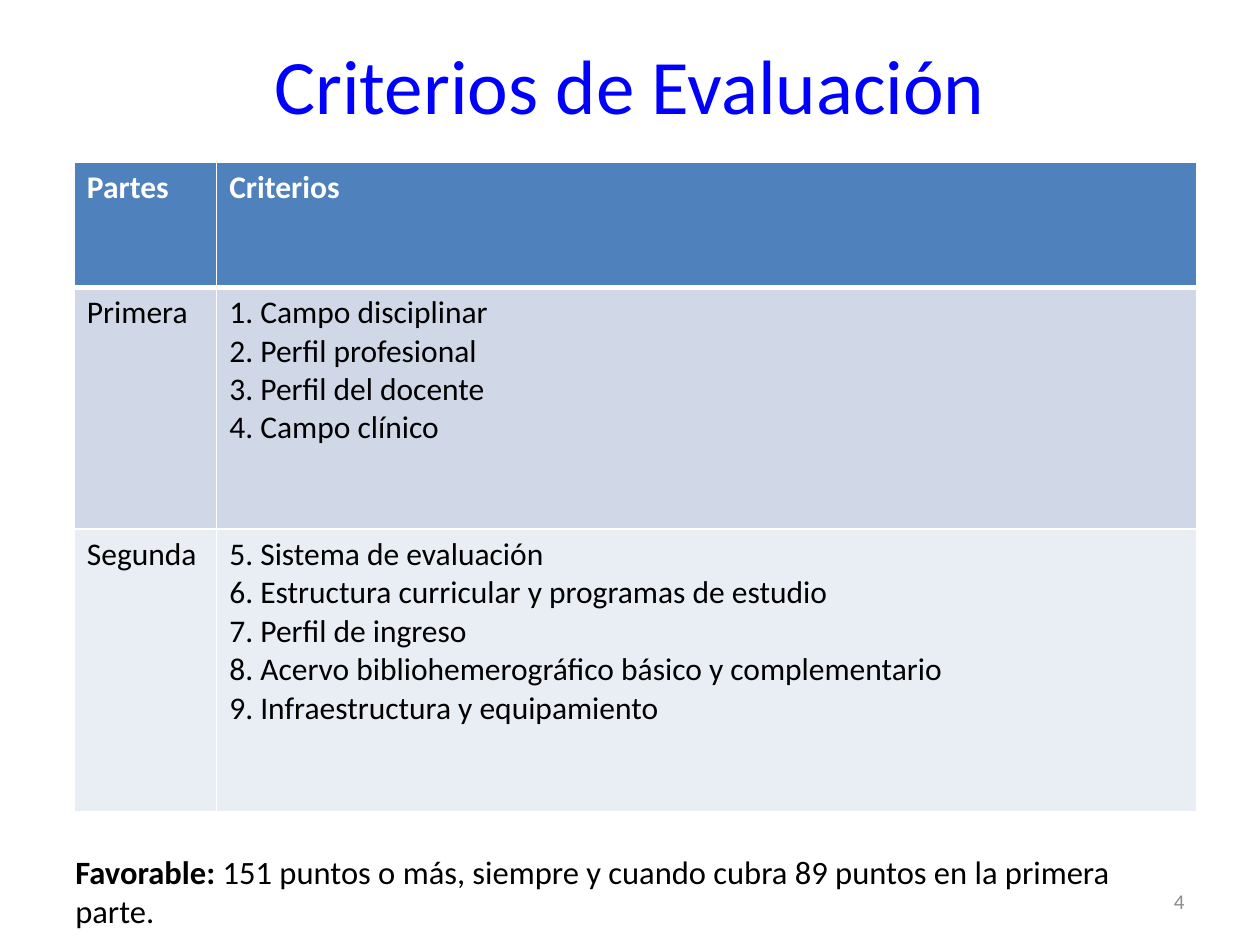
from dataclasses import dataclass
from pptx import Presentation
from pptx.dml.color import RGBColor
from pptx.enum.text import MSO_ANCHOR as Anchor, PP_ALIGN as Align
from pptx.oxml import parse_xml
from pptx.oxml.ns import nsdecls
from pptx.util import Inches, Pt

TITLE = "Criterios de Evaluación"
ROWS = [
    ("Partes", ["Criterios"]),
    ("Primera", ["1. Campo disciplinar", "2. Perfil profesional",
                 "3. Perfil del docente", "4. Campo clínico"]),
    ("Segunda", ["5. Sistema de evaluación",
                 "6. Estructura curricular y programas de estudio",
                 "7. Perfil de ingreso",
                 "8. Acervo bibliohemerográfico básico y complementario",
                 "9. Infraestructura y equipamiento"]),
]
VERDICT = [("Favorable: ", True),
           ("151 puntos o más, siempre y cuando cubra 89 puntos en la primera parte.", False)]
PAGE_NUMBER = "4"

COLUMN_WIDTHS = [1.13, 7.78]
ROW_HEIGHTS = [0.99, 1.92, 2.24]


@dataclass(frozen=True)
class Theme:
    font: str = "Calibri"
    title: str = "0000FF"
    text: str = "000000"
    muted: str = "8C8C8C"
    white: str = "FFFFFF"
    row_fills: tuple = ("4F81BD", "D0D8E8", "E9EDF4")
    title_size: float = 44
    table_size: float = 18
    verdict_size: float = 18.6
    number_size: float = 12
    thin: float = 1
    thick: float = 3


THEME = Theme()


def add_run(paragraph, text, size, color, bold=False):
    run = paragraph.add_run()
    run.text = text
    run.font.name = THEME.font
    run.font.size = Pt(size)
    run.font.bold = bold
    run.font.color.rgb = RGBColor.from_string(color)


def add_text(slide, box, runs, size, color, align, anchor, top_inset=0.05):
    shape = slide.shapes.add_textbox(*map(Inches, box))
    frame = shape.text_frame
    frame.word_wrap = True
    frame.vertical_anchor = anchor
    frame.margin_top = Inches(top_inset)
    paragraph = frame.paragraphs[0]
    paragraph.alignment = align
    for text, bold in runs:
        add_run(paragraph, text, size, color, bold)


def set_borders(cell, widths):
    properties = cell._tc.get_or_add_tcPr()
    for index, (side, width) in enumerate(widths.items()):
        properties.insert(index, parse_xml(
            f'<a:ln{side} {nsdecls("a")} w="{Pt(width)}"><a:solidFill>'
            f'<a:srgbClr val="{THEME.white}"/></a:solidFill></a:ln{side}>'))


def fill_cell(cell, lines, row):
    header = row == 0
    cell.fill.solid()
    cell.fill.fore_color.rgb = RGBColor.from_string(THEME.row_fills[row])
    for index, line in enumerate(lines):
        frame = cell.text_frame
        paragraph = frame.add_paragraph() if index else frame.paragraphs[0]
        add_run(paragraph, line, THEME.table_size,
                THEME.white if header else THEME.text, header)
    set_borders(cell, {"L": THEME.thin, "R": THEME.thin,
                       "T": THEME.thick if row == 1 else THEME.thin,
                       "B": THEME.thick if header else THEME.thin})


def add_criteria_table(slide):
    table = slide.shapes.add_table(
        len(ROWS), len(COLUMN_WIDTHS), Inches(0.59), Inches(1.29),
        Inches(sum(COLUMN_WIDTHS)), Inches(sum(ROW_HEIGHTS))).table
    for column, width in zip(table.columns, COLUMN_WIDTHS):
        column.width = Inches(width)
    for index, (part, criteria) in enumerate(ROWS):
        table.rows[index].height = Inches(ROW_HEIGHTS[index])
        fill_cell(table.cell(index, 0), [part], index)
        fill_cell(table.cell(index, 1), criteria, index)


def main():
    presentation = Presentation()
    presentation.slide_width = Inches(10)
    presentation.slide_height = Inches(7.5)
    slide = presentation.slides.add_slide(presentation.slide_layouts[6])
    add_text(slide, (0.5, 0.04, 9, 1.25), [(TITLE, False)],
             THEME.title_size, THEME.title, Align.CENTER, Anchor.MIDDLE)
    add_text(slide, (0.5, 6.34, 9, 0.94), VERDICT,
             THEME.verdict_size, THEME.text, Align.LEFT, Anchor.TOP, 0.42)
    add_text(slide, (7.17, 6.95, 2.33, 0.4), [(PAGE_NUMBER, False)],
             THEME.number_size, THEME.muted, Align.RIGHT, Anchor.MIDDLE)
    add_criteria_table(slide)
    presentation.save("out.pptx")


if __name__ == "__main__":
    main()
